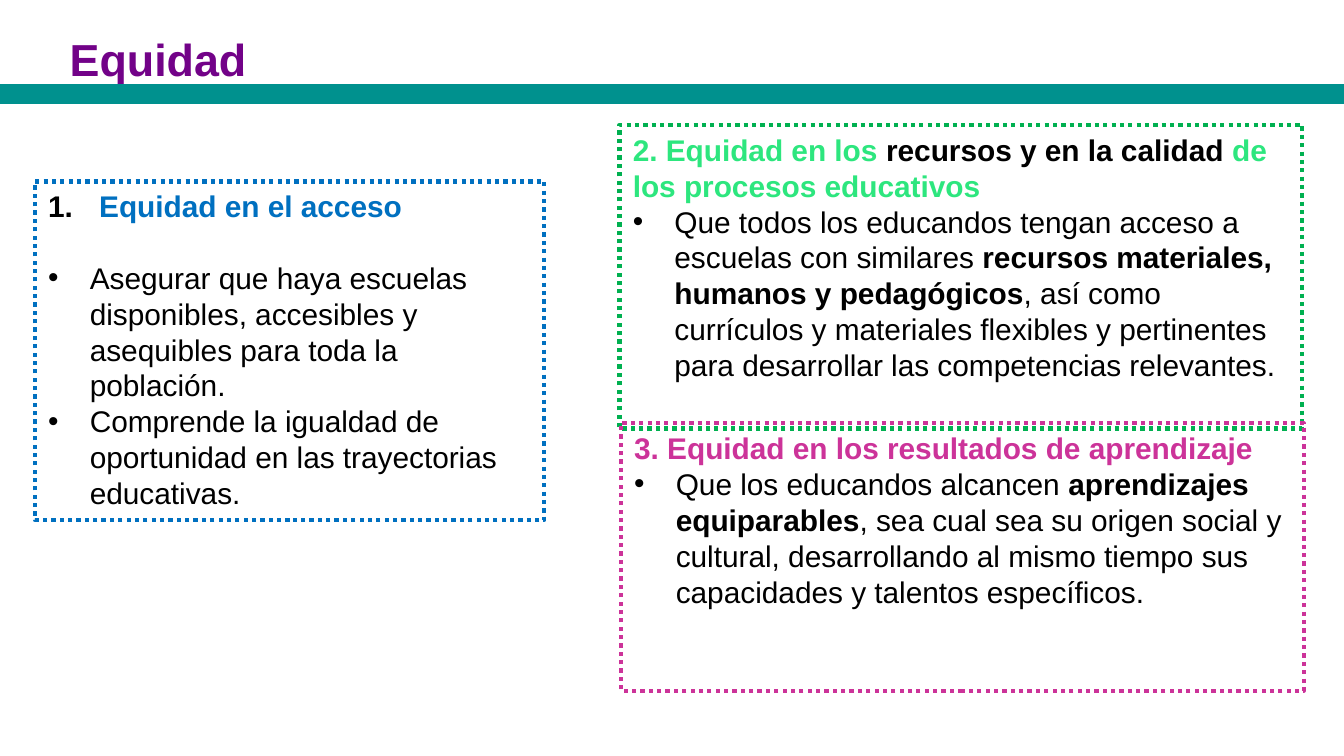
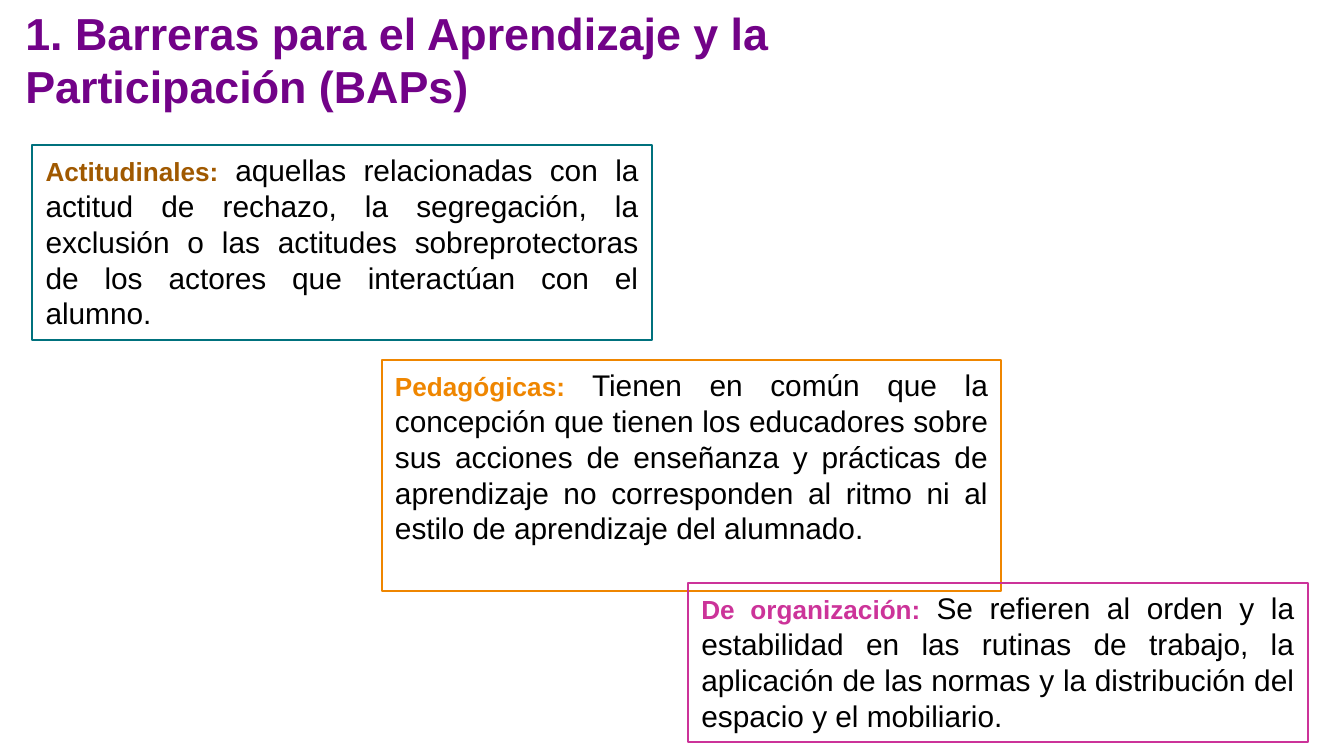
from lxml.etree import SubElement
from pptx import Presentation
from pptx.dml.color import RGBColor
from pptx.enum.dml import MSO_LINE
from pptx.enum.shapes import MSO_CONNECTOR, MSO_SHAPE
from pptx.enum.text import MSO_ANCHOR, PP_ALIGN
from pptx.oxml.ns import qn
from pptx.util import Inches, Pt

FONT = "Arial"
PURPLE, TEAL, BLACK = "720288", "00918E", "000000"
BLUE, GREEN, MINT, PINK = "0070C0", "00B050", "2DE67E", "CC3399"
PETROL, BROWN, ORANGE = "00717D", "A05900", "EF8600"

# Titles: text, box, indent
EQUITY_TITLE = ("Equidad", (0.14, 0.19, 2.71, 0.5), 0.28)
BARRIERS_TITLE = ("1. Barreras para el Aprendizaje y la Participación (BAPs)",
                  (0.09, -0.01, 6.69, 0.91), 0)

# Equity boxes: box, outline, numbered heading, heading runs, bullets of (text, bold) runs
EQUITY = [
    ((0.26, 1.35, 3.79, 2.52), BLUE, True,
     [("Equidad en el acceso", BLUE)],
     [[("Asegurar que haya escuelas disponibles, accesibles y asequibles "
        "para toda la población.", False)],
      [("Comprende la igualdad de oportunidad en las trayectorias educativas.", False)]]),
    ((4.61, 0.93, 5.08, 2.26), GREEN, False,
     [("2. Equidad en los ", MINT), ("recursos y en la calidad ", BLACK),
      ("de los procesos educativos", MINT)],
     [[("Que todos los educandos tengan acceso a escuelas con similares ", False),
       ("recursos materiales, humanos y pedagógicos", True),
       (", así como currículos y materiales flexibles y pertinentes para "
        "desarrollar las competencias relevantes.", False)]]),
    ((4.62, 3.15, 5.08, 1.99), PINK, False,
     [("3. Equidad en los resultados de aprendizaje", PINK)],
     [[("Que los educandos alcancen ", False), ("aprendizajes equiparables", True),
       (", sea cual sea su origen social y cultural, desarrollando al mismo "
        "tiempo sus capacidades y talentos específicos.", False)]]),
]

# Barriers: left, top, height, outline, label colour, label, description
BARRIER_W = 4.61
BARRIERS = [
    (0.24, 1.08, 1.45, PETROL, BROWN, "Actitudinales: ",
     "aquellas relacionadas con la actitud de rechazo, la segregación, la exclusión o las "
     "actitudes sobreprotectoras de los actores que interactúan con el alumno."),
    (2.84, 2.68, 1.72, ORANGE, ORANGE, "Pedagógicas: ",
     "Tienen en común que la concepción que tienen los educadores sobre sus acciones de "
     "enseñanza y prácticas de aprendizaje no corresponden al ritmo ni al estilo de "
     "aprendizaje del alumnado. "),
    (5.12, 4.34, 1.18, PINK, PINK, "De organización: ",
     "Se refieren al orden y la estabilidad en las rutinas de trabajo, la aplicación de las "
     "normas y la distribución del espacio y el mobiliario. "),
]


def rgb(color):
    return RGBColor.from_string(color)


def add_run(p, text, color, size=16, bold=False):
    r = p.add_run()
    r.text = text
    r.font.name, r.font.size, r.font.bold = FONT, Pt(size), bold
    r.font.color.rgb = rgb(color)


def set_bullet(p, indent, tag, **attrs):
    pPr = p._p.get_or_add_pPr()
    pPr.set("marL", str(Inches(indent)))
    pPr.set("indent", str(-Inches(indent)))
    color = SubElement(pPr, qn("a:buClr"))
    SubElement(color, qn("a:srgbClr"), val=BLACK)
    SubElement(pPr, qn("a:buFont"), typeface=FONT)
    SubElement(pPr, qn(tag), **attrs)


def add_title(s, text, box, indent):
    tf = s.shapes.add_textbox(*map(Inches, box)).text_frame
    tf.word_wrap = True
    p = tf.paragraphs[0]
    if indent:
        p._p.get_or_add_pPr().set("marL", str(Inches(indent)))
    add_run(p, text, PURPLE, 24, True)


def add_box(s, box, color, width, dash=None):
    sp = s.shapes.add_shape(MSO_SHAPE.RECTANGLE, *map(Inches, box))
    sp.shadow.inherit = False
    sp.fill.background()
    sp.line.color.rgb = rgb(color)
    sp.line.width = Pt(width)
    if dash:
        sp.line.dash_style = dash
    tf = sp.text_frame
    tf.word_wrap = True
    tf.vertical_anchor = MSO_ANCHOR.TOP
    tf.paragraphs[0].alignment = PP_ALIGN.LEFT
    return tf


def add_rule(s, y, width):
    line = s.shapes.add_connector(MSO_CONNECTOR.STRAIGHT, 0, Inches(y), width, Inches(y))
    line.line.color.rgb = rgb(TEAL)
    line.line.width = Pt(6)
    SubElement(line._element.spPr, qn("a:effectLst"))


def equity_slide(s, width):
    add_title(s, *EQUITY_TITLE)
    for y in (0.67, 0.73):
        add_rule(s, y, width)
    for box, color, numbered, heading, bullets in EQUITY:
        tf = add_box(s, box, color, 2.25, MSO_LINE.ROUND_DOT)
        p = tf.paragraphs[0]
        if numbered:
            p.space_after = Pt(19.2)
            set_bullet(p, 0.38, "a:buAutoNum", type="arabicPeriod")
        for text, run_color in heading:
            add_run(p, text, run_color, bold=True)
        for runs in bullets:
            p = tf.add_paragraph()
            p.alignment = PP_ALIGN.LEFT
            set_bullet(p, 0.31, "a:buChar", char="•")
            for text, bold in runs:
                add_run(p, text, BLACK, bold=bold)


def barriers_slide(s, width):
    add_title(s, *BARRIERS_TITLE)
    for left, top, height, outline, color, label, description in BARRIERS:
        p = add_box(s, (left, top, BARRIER_W, height), outline, 1).paragraphs[0]
        p.alignment = PP_ALIGN.JUSTIFY
        add_run(p, label, color, 14, True)
        add_run(p, description, BLACK)


def main():
    prs = Presentation()
    # Widescreen, 16:9
    prs.slide_width = Inches(10)
    prs.slide_height = Inches(10) * 9 // 16
    for build in (equity_slide, barriers_slide):
        build(prs.slides.add_slide(prs.slide_layouts[6]), prs.slide_width)
    prs.save("out.pptx")


if __name__ == "__main__":
    main()
